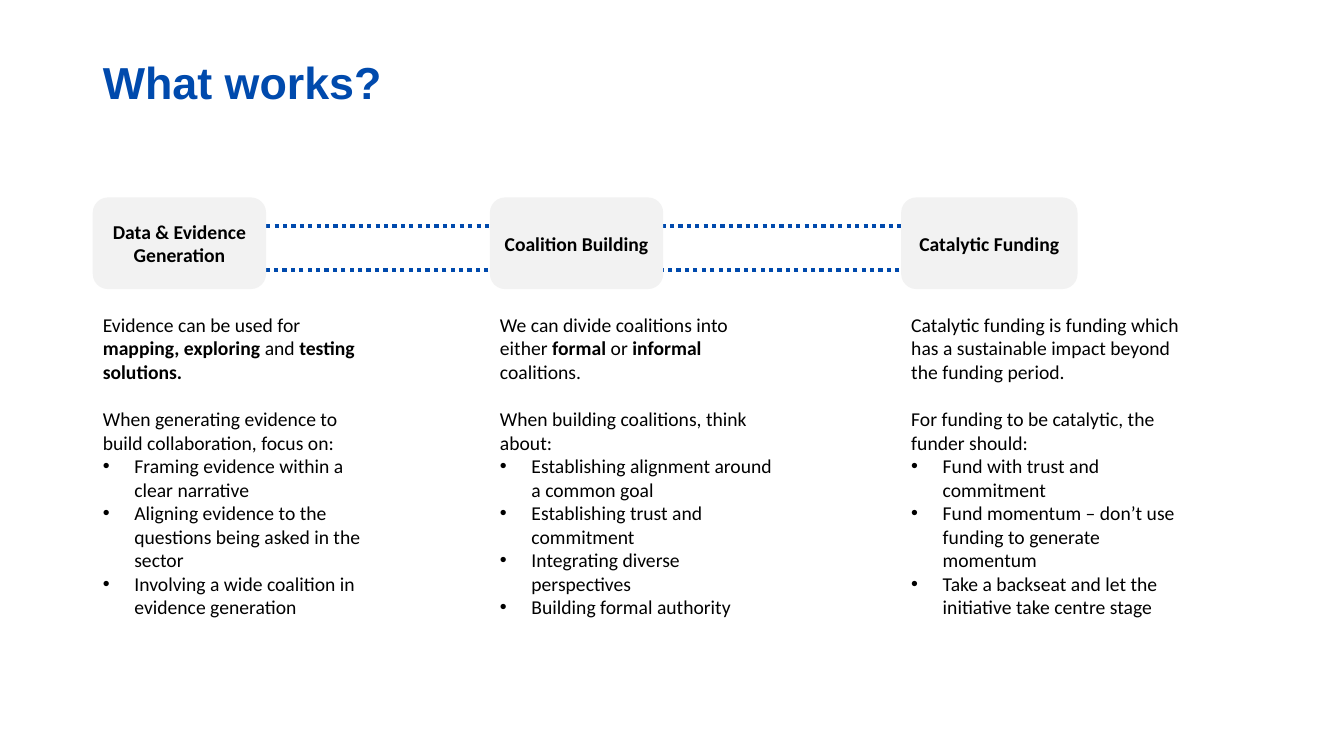
from dataclasses import dataclass
from typing import Any

from lxml.etree import SubElement
from pptx import Presentation
from pptx.dml.color import RGBColor
from pptx.enum.dml import MSO_LINE
from pptx.enum.shapes import MSO_SHAPE as Preset
from pptx.enum.text import MSO_ANCHOR as Anchor, MSO_AUTO_SIZE as AutoSize, PP_ALIGN as Align
from pptx.oxml.ns import qn
from pptx.util import Pt

COLOURS = {"blue": "004AAD", "card": "F2F2F2", "text": "000000"}
TITLE_FONT = {"name": "Arial", "size": Pt(32), "bold": True}
CARD_FONT = {"name": "Calibri", "size": Pt(14), "bold": True}
BODY_FONT = {"name": "Calibri", "size": Pt(14)}
BODY_PARAGRAPH = {"alignment": Align.LEFT, "space_before": Pt(0), "line_spacing": 1.0}
FRAME = {"word_wrap": True, "auto_size": AutoSize.NONE}
CARD_TOP, CARD_HEIGHT = 141, 65.5
BODY_TOP, BODY_WIDTH, BODY_HEIGHT = 219.6, 212.4, 227.5
INDENT = 22.5
PARAGRAPH_GAP = 17


@dataclass
class Column:
    placeholder: int
    left: float
    card_width: float
    heading: str
    summary: str  # ** switches bold on and off
    lead: str
    points: list[str]


COLUMNS = [
    Column(1, 66.24, 123.84, "Data & Evidence Generation",
           "Evidence can be used for **mapping, exploring **and **testing solutions.",
           "When generating evidence to build collaboration, focus on:",
           ["Framing evidence within a clear narrative",
            "Aligning evidence to the questions being asked in the sector",
            "Involving a wide coalition in evidence generation"]),
    Column(2, 349.92, 123.84, "Coalition Building",
           "We can divide coalitions into either **formal** or **informal** coalitions.",
           "When building coalitions, think about:",
           ["Establishing alignment around a common goal",
            "Establishing trust and commitment",
            "Integrating diverse perspectives",
            "Building formal authority"]),
    Column(3, 643.68, 126, "Catalytic Funding",
           "Catalytic funding is funding which has a sustainable impact beyond the funding period.",
           "For funding to be catalytic, the funder should:",
           ["Fund with trust and commitment",
            "Fund momentum – don’t use funding to generate momentum",
            "Take a backseat and let the initiative take centre stage"]),
]


def apply(target: Any, values: dict[str, Any]) -> None:
    for name, value in values.items():
        setattr(target, name, value)


def colour(name: str) -> RGBColor:
    return RGBColor.from_string(COLOURS[name])


def place(shape: Any, left: float, top: float, width: float, height: float) -> None:
    apply(shape, {"left": Pt(left), "top": Pt(top), "width": Pt(width), "height": Pt(height)})


def add_text(paragraph: Any, text: str, font: dict[str, Any], colour_name: str) -> None:
    run = paragraph.add_run()
    run.text = text
    apply(run.font, font)
    run.font.color.rgb = colour(colour_name)


def set_bullet(paragraph: Any, bulleted: bool) -> None:
    properties = paragraph._p.get_or_add_pPr()
    indent = Pt(INDENT) if bulleted else 0
    properties.set("marL", str(indent))
    properties.set("indent", str(-indent))
    if bulleted:
        SubElement(properties, qn("a:buFont"), typeface="Arial")
        SubElement(properties, qn("a:buChar"), char="•")
    else:
        SubElement(properties, qn("a:buNone"))


def draw_card(slide: Any, column: Column) -> None:
    card = slide.shapes.add_shape(Preset.ROUNDED_RECTANGLE, Pt(column.left), Pt(CARD_TOP),
                                  Pt(column.card_width), Pt(CARD_HEIGHT))
    card.shadow.inherit = False
    card.fill.solid()
    card.fill.fore_color.rgb = colour("card")
    card.line.fill.background()
    apply(card.text_frame, FRAME | {"vertical_anchor": Anchor.MIDDLE})
    paragraph = card.text_frame.paragraphs[0]
    paragraph.alignment = Align.CENTER
    add_text(paragraph, column.heading, CARD_FONT, "text")


def fill_body(slide: Any, column: Column) -> None:
    body = slide.placeholders[column.placeholder]
    place(body, column.left, BODY_TOP, BODY_WIDTH, BODY_HEIGHT)
    frame = body.text_frame
    apply(frame, FRAME | {"vertical_anchor": Anchor.TOP})
    for index, text in enumerate([column.summary, column.lead, *column.points]):
        paragraph = frame.add_paragraph() if index else frame.paragraphs[0]
        apply(paragraph, BODY_PARAGRAPH)
        paragraph.space_after = Pt(0 if index else PARAGRAPH_GAP)
        set_bullet(paragraph, index > 1)
        for part, segment in enumerate(text.split("**")):
            add_text(paragraph, segment, BODY_FONT | {"bold": part % 2 == 1}, "text")


def main() -> None:
    presentation = Presentation()
    apply(presentation, {"slide_width": Pt(960), "slide_height": Pt(540)})
    slide = presentation.slides.add_slide(presentation.slide_layouts[4])

    # Title
    title = slide.shapes.title
    place(title, 66.24, 28.8, 488.88, 64.08)
    apply(title.text_frame, FRAME | {"vertical_anchor": Anchor.MIDDLE})
    paragraph = title.text_frame.paragraphs[0]
    apply(paragraph, {"alignment": Align.LEFT, "line_spacing": 0.9})
    add_text(paragraph, "What works?", TITLE_FONT, "blue")

    # Dotted band behind the cards
    band = slide.shapes.add_shape(Preset.RECTANGLE, Pt(123.12), Pt(161.28), Pt(619.92), Pt(31.68))
    band.shadow.inherit = False
    band.fill.background()
    band.line.color.rgb = colour("blue")
    apply(band.line, {"width": Pt(3), "dash_style": MSO_LINE.ROUND_DOT})

    # Heading cards with their text columns
    for column in COLUMNS:
        draw_card(slide, column)
        fill_body(slide, column)

    # Unused placeholder
    spare = slide.placeholders[4].element
    spare.getparent().remove(spare)
    presentation.save("out.pptx")


if __name__ == "__main__":
    main()
